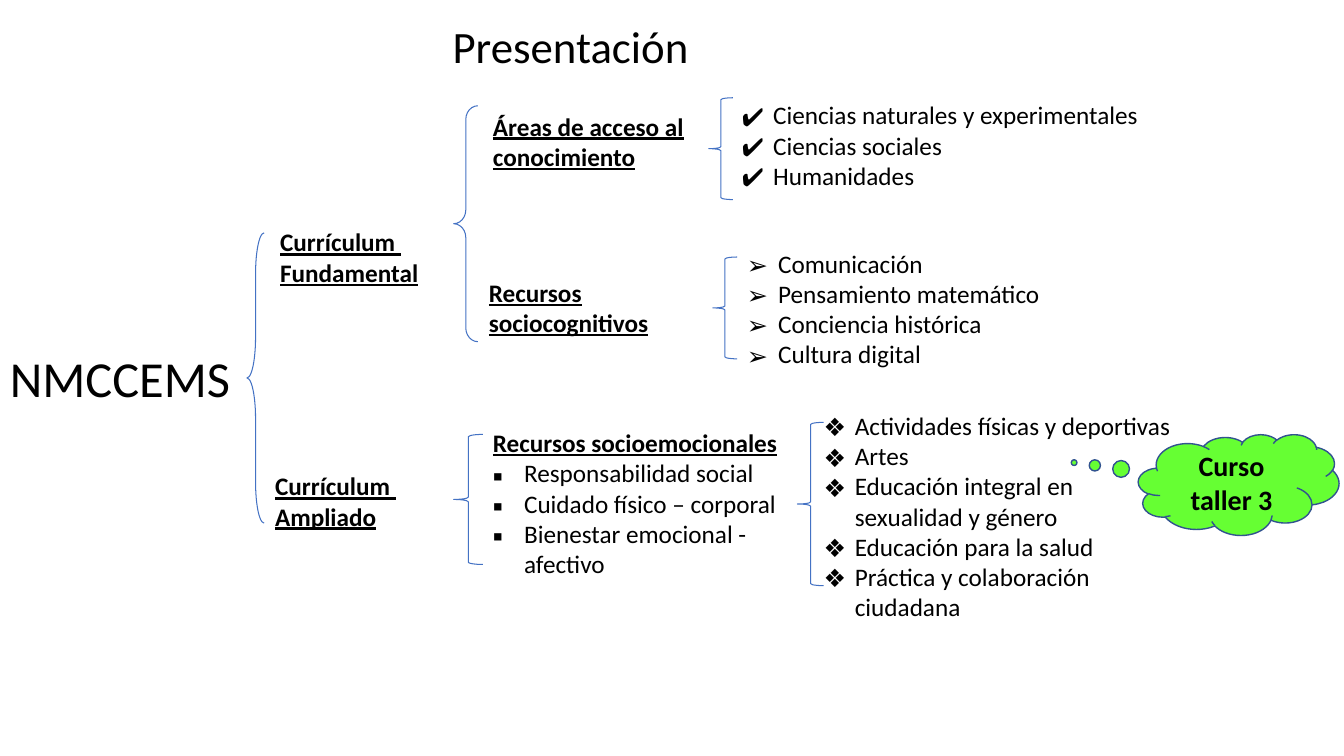
"""Builds the NMCCEMS curriculum overview slide."""
from dataclasses import dataclass

from lxml.etree import SubElement
from pptx import Presentation
from pptx.dml.color import RGBColor
from pptx.enum.shapes import MSO_SHAPE
from pptx.enum.text import MSO_ANCHOR, MSO_AUTO_SIZE, PP_ALIGN
from pptx.oxml.ns import qn
from pptx.util import Emu, Pt


@dataclass(frozen=True)
class Theme:
    font: str = "Calibri"
    bullet_font: str = "Noto Sans Symbols"
    ink: RGBColor = RGBColor(0, 0, 0)
    brace: RGBColor = RGBColor(0x44, 0x72, 0xC4)
    cloud: RGBColor = RGBColor(0x66, 0xFF, 0x33)
    cloud_edge: RGBColor = RGBColor(0x31, 0x53, 0x8F)
    root: int = 36
    title: int = 32
    callout: int = 20
    body: int = 18


PX = 9144
INDENT = 31
theme = Theme()


def write_line(para, text, size, bold=False, underline=False, bullet=None):
    para.text = text
    if bullet:
        properties = para._p.get_or_add_pPr()
        properties.set("marL", str(INDENT * PX))
        properties.set("indent", str(-INDENT * PX))
        SubElement(properties, qn("a:buFont")).set("typeface", theme.bullet_font)
        SubElement(properties, qn("a:buChar")).set("char", bullet)
    font = para.font
    font.name = theme.font
    font.size = Pt(size)
    font.bold = bold
    font.underline = underline
    font.color.rgb = theme.ink


def add_text(page, bounds, lines, size=theme.body, heading=False, bullet=None):
    box = page.shapes.add_textbox(*[Emu(length * PX) for length in bounds])
    frame = box.text_frame
    frame.word_wrap = True
    frame.auto_size = MSO_AUTO_SIZE.SHAPE_TO_FIT_TEXT
    for index, line in enumerate(lines):
        para = frame.paragraphs[0] if index == 0 else frame.add_paragraph()
        is_heading = heading and (index == 0 or not bullet)
        write_line(para, line, size, is_heading, is_heading, None if is_heading else bullet)


deck = Presentation()
deck.slide_width, deck.slide_height = Emu(1333 * PX), Emu(750 * PX)
page = deck.slides.add_slide(deck.slide_layouts[6])

braces = [
    ((245, 231, 17, 288), 2.38),
    ((450, 105, 24, 234), 0.57),
    ((450, 431, 29, 129), 0.08),
    ((703, 97, 24, 101), 0.08),
    ((707, 255, 24, 101), 0.08),
    ((791, 419, 26, 162), 0.08),
]
for bounds, curl in braces:
    brace = page.shapes.add_shape(MSO_SHAPE.LEFT_BRACE, *[Emu(length * PX) for length in bounds])
    brace.shadow.inherit = False
    brace.adjustments[0] = curl
    brace.fill.background()
    brace.line.color.rgb = theme.brace
    brace.line.width = Pt(0.75)

add_text(page, (439, 14, 311, 64), ["Presentación"], theme.title)
add_text(page, (0, 339, 251, 71), ["NMCCEMS"], theme.root)

headings = [
    ((268, 220, 172, 71), ["Currículum ", "Fundamental"]),
    ((263, 462, 146, 71), ["Currículum ", "Ampliado"]),
    ((479, 105, 241, 71), ["Áreas de acceso al conocimiento"]),
    ((475, 270, 207, 71), ["Recursos sociocognitivos"]),
]
for bounds, lines in headings:
    add_text(page, bounds, lines, heading=True)

lists = [
    ((726, 94, 457, 101), "✔", False,
     ["Ciencias naturales y experimentales", "Ciencias sociales", "Humanidades"]),
    ((731, 241, 423, 131), "➢", False,
     ["Comunicación", "Pensamiento matemático", "Conciencia histórica", "Cultura digital"]),
    ((807, 402, 375, 222), "❖", False,
     ["Actividades físicas y deportivas", "Artes", "Educación integral en sexualidad y género",
      "Educación para la salud", "Práctica y colaboración ciudadana"]),
    ((479, 419, 316, 162), "▪", True,
     ["Recursos socioemocionales", "Responsabilidad social", "Cuidado físico – corporal",
      "Bienestar emocional - afectivo"]),
]
for bounds, bullet, heading, lines in lists:
    add_text(page, bounds, lines, heading=heading, bullet=bullet)

cloud = page.shapes.add_shape(
    MSO_SHAPE.CLOUD_CALLOUT, *[Emu(length * PX) for length in (1129, 431, 199, 100)])
cloud.shadow.inherit = False
cloud.adjustments[0], cloud.adjustments[1] = -0.82, -0.22
cloud.fill.solid()
cloud.fill.fore_color.rgb = theme.cloud
cloud.line.color.rgb = theme.cloud_edge
cloud.line.width = Pt(1)
cloud.text_frame.word_wrap = True
cloud.text_frame.vertical_anchor = MSO_ANCHOR.MIDDLE
label = cloud.text_frame.paragraphs[0]
label.alignment = PP_ALIGN.CENTER
write_line(label, "Curso taller 3", theme.callout, bold=True)

deck.save("out.pptx")
